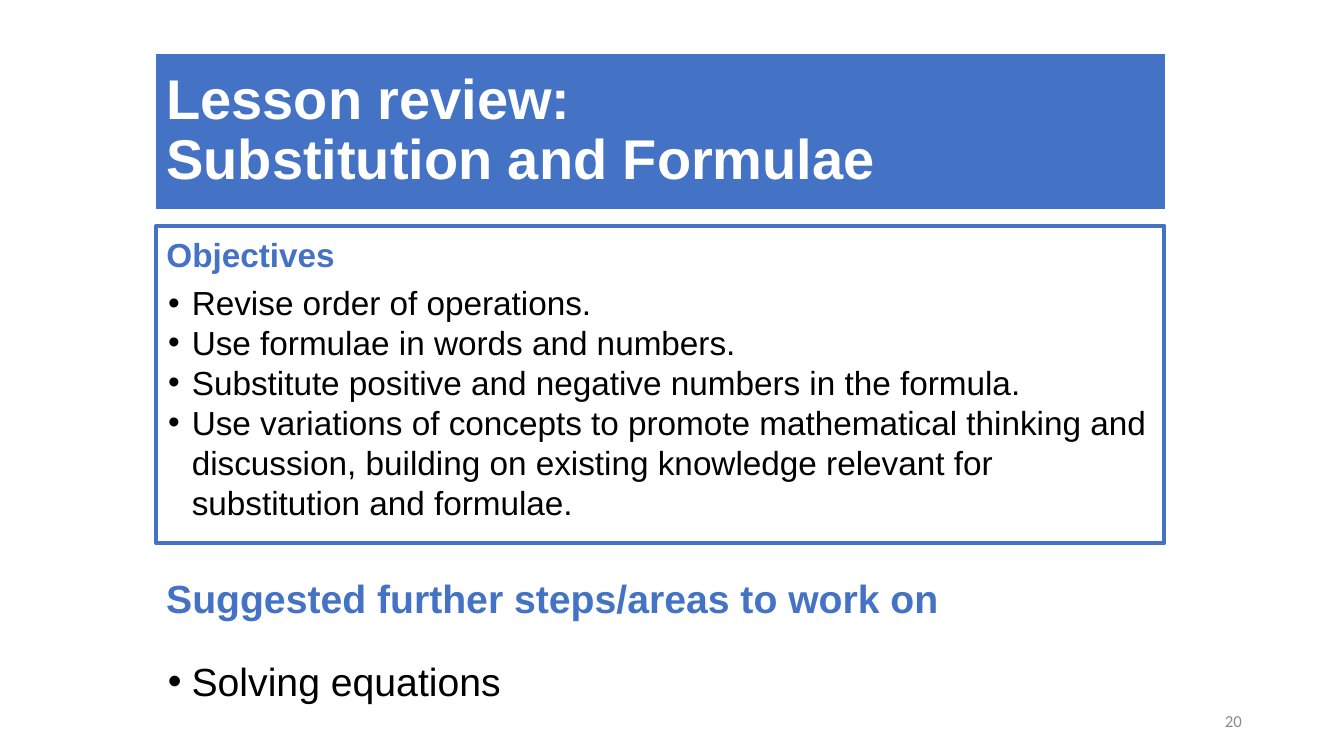
from lxml import etree
from pptx import Presentation
from pptx.dml.color import RGBColor
from pptx.enum.text import MSO_ANCHOR, MSO_AUTO_SIZE, PP_ALIGN
from pptx.oxml.ns import qn
from pptx.util import Cm, Pt

MIDDLE, TOP = MSO_ANCHOR.MIDDLE, MSO_ANCHOR.TOP
LEFT, RIGHT = PP_ALIGN.LEFT, PP_ALIGN.RIGHT
NO_AUTOFIT = MSO_AUTO_SIZE.NONE

COLOURS = {"blue": "4472C4", "white": "FFFFFF", "black": "000000", "grey": "8C8C8C"}
MARGIN, CONTENT_WIDTH = 3.94, 25.4

OBJECTIVES = [
    "Revise order of operations.",
    "Use formulae in words and numbers.",
    "Substitute positive and negative numbers in the formula.",
    "Use variations of concepts to promote mathematical thinking and discussion, "
    "building on existing knowledge relevant for substitution and formulae.",
]


def colour(name):
    return RGBColor.from_string(COLOURS[name])


class ReviewSlide:
    font = "Arial"

    def __init__(self, deck):
        self.slide = deck.slides.add_slide(deck.slide_layouts[0])

    def place(self, box, left, top, width, height, anchor=TOP):
        box.left, box.top, box.width, box.height = map(Cm, (left, top, width, height))
        frame = box.text_frame
        frame.word_wrap = True
        frame.auto_size = NO_AUTOFIT
        frame.vertical_anchor = anchor
        return frame

    def outline(self, box, weight):
        box.line.color.rgb = colour("blue")
        box.line.width = Pt(weight)

    def set_text(self, paragraph, text, size, ink, bold=False, font=None, align=LEFT,
                 leading=1.0, before=0, after=0):
        paragraph.text = text
        paragraph.alignment = align
        paragraph.line_spacing = leading
        paragraph.space_before, paragraph.space_after = Pt(before), Pt(after)
        paragraph.font.name = font or self.font
        paragraph.font.size = Pt(size)
        paragraph.font.bold = bold
        paragraph.font.color.rgb = colour(ink)

    def title(self, text, top, height):
        banner = self.slide.shapes.title
        frame = self.place(banner, MARGIN, top, CONTENT_WIDTH, height, MIDDLE)
        banner.fill.solid()
        banner.fill.fore_color.rgb = colour("blue")
        self.outline(banner, 0.75)
        self.set_text(frame.paragraphs[0], text, 40, "white", bold=True, leading=0.9)

    def bullet(self, frame, text, size, leading, before=0):
        item = frame.add_paragraph()
        properties = item._p.get_or_add_pPr()
        properties.set("marL", str(Cm(0.64)))
        properties.set("indent", str(Cm(-0.6)))
        tint = etree.SubElement(properties, qn("a:buClr"))
        etree.SubElement(tint, qn("a:srgbClr"), val=COLOURS["black"])
        etree.SubElement(properties, qn("a:buFont"), typeface=self.font)
        etree.SubElement(properties, qn("a:buChar"), char="•")
        self.set_text(item, text, size, "black", leading=leading, before=before)

    def section(self, frame, heading, items, size, leading, before=0):
        self.set_text(frame.paragraphs[0], heading, size, "blue", bold=True,
                      leading=Pt(31), after=6)
        for text in items:
            self.bullet(frame, text, size, leading, before)

    def objectives(self, heading, items, top, height):
        panel = self.slide.placeholders[1]
        frame = self.place(panel, MARGIN, top, CONTENT_WIDTH, height)
        self.outline(panel, 3)
        self.section(frame, heading, items, 23.8, Pt(28.5))

    def further_steps(self, heading, items, top, height):
        box = self.slide.shapes.add_textbox(0, 0, 0, 0)
        frame = self.place(box, MARGIN, top, CONTENT_WIDTH, height)
        self.section(frame, heading, items, 28, 1.11, before=16)

    def page_number(self, text):
        box = self.slide.shapes.add_textbox(0, 0, 0, 0)
        frame = self.place(box, 23.93, 17.65, 7.62, 1.02, MIDDLE)
        self.set_text(frame.paragraphs[0], text, 12, "grey", font="Calibri", align=RIGHT)


def main():
    deck = Presentation()
    deck.slide_width, deck.slide_height = Cm(33.87), Cm(19.05)
    review = ReviewSlide(deck)
    review.page_number("20")
    review.title("Lesson review:\vSubstitution and Formulae", 1.37, 3.89)
    review.objectives("Objectives", OBJECTIVES, 5.69, 8)
    review.further_steps("Suggested further steps/areas to work on",
                         ["Solving equations"], 14.45, 3.23)
    deck.save("out.pptx")


if __name__ == "__main__":
    main()
